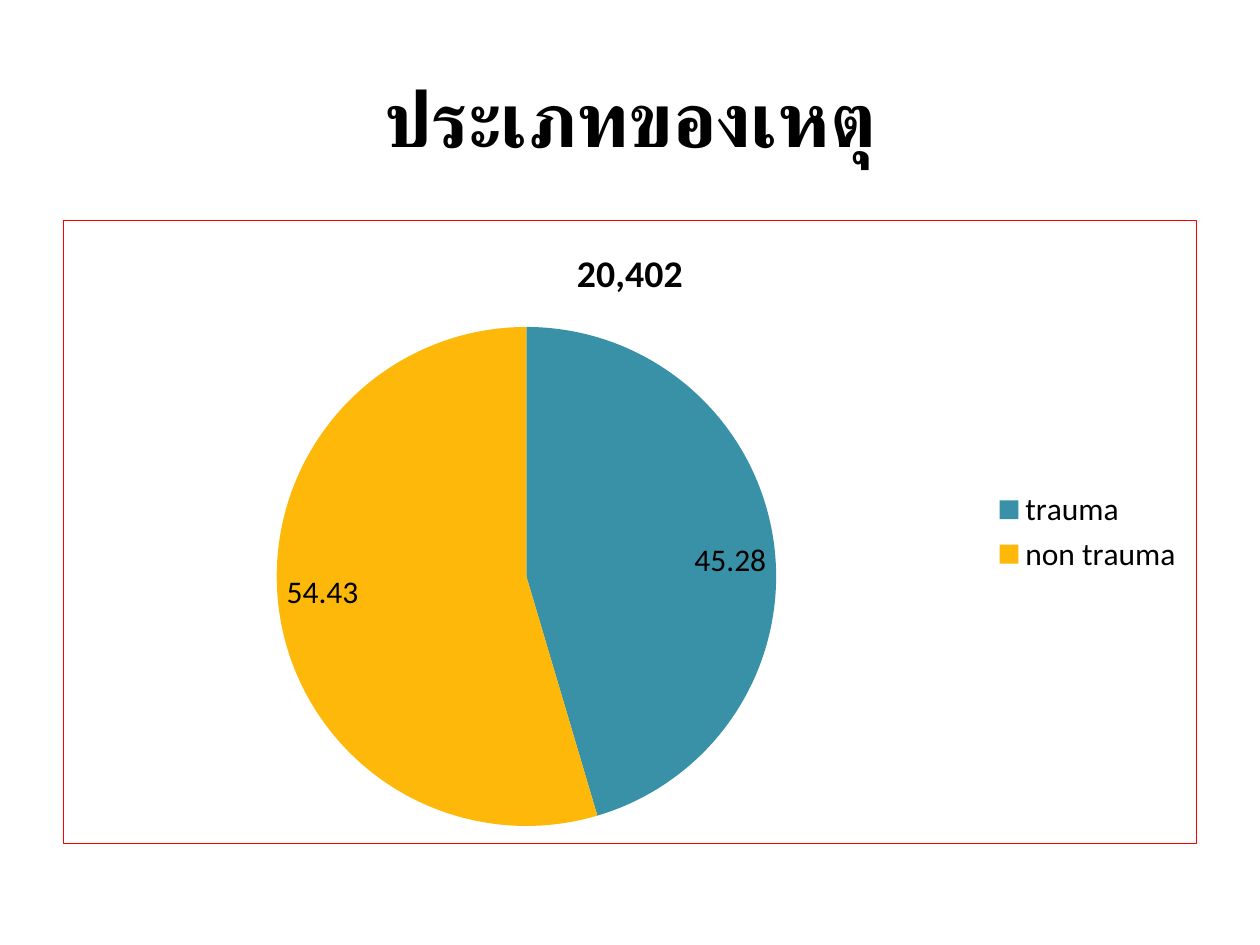
from lxml.etree import fromstring
from pptx import Presentation
from pptx.chart.data import CategoryChartData as Data
from pptx.dml.color import RGBColor as RGB
from pptx.enum.chart import XL_CHART_TYPE as Kind, XL_LABEL_POSITION as Spot, XL_LEGEND_POSITION as Side
from pptx.enum.text import MSO_ANCHOR as Anchor, PP_ALIGN as Align
from pptx.oxml.ns import qn
from pptx.util import Pt

TITLE = "ประเภทของเหตุ"
TOTAL = "20,402"
BLACK = RGB(0, 0, 0)
RED = RGB(255, 0, 0)
TEAL = RGB(0x38, 0x91, 0xA7)
GOLD = RGB(0xFE, 0xB8, 0x0A)
PARTS = [("trauma", 45.28, TEAL), ("non trauma", 54.43, GOLD)]
FONT = "Calibri"
PX = 914400 // 126
WIDE, HIGH = 1260, 945
EDGE = 63
TITLE_TOP, TITLE_HIGH = 38, 158
CHART_TOP, CHART_HIGH = 220, 624


def place(top, high):
    return [n * PX for n in (EDGE, top, WIDE - 2 * EDGE, high)]


def style(font, size, bold=False):
    font.name, font.size, font.bold = FONT, Pt(size), bold
    font.color.rgb = BLACK


def write(frame, text, size):
    line = frame.paragraphs[0]
    line.alignment = Align.CENTER
    run = line.add_run()
    run.text = text
    style(run.font, size, True)


def frame_chart(chart, color, width):
    ns = "http://schemas.openxmlformats.org/drawingml/2006/"
    border = fromstring(
        f'<c:spPr xmlns:c="{ns}chart" xmlns:a="{ns}main"><a:noFill/>'
        f'<a:ln w="{Pt(width)}"><a:solidFill><a:srgbClr val="{color}"/>'
        '</a:solidFill></a:ln></c:spPr>')
    chart.element.find(qn("c:chart")).addnext(border)


def add_pie(slide):
    data = Data(number_format="General")
    data.categories = [name for name, _, _ in PARTS]
    data.add_series(TOTAL, [value for _, value, _ in PARTS])
    box = place(CHART_TOP, CHART_HIGH)
    chart = slide.shapes.add_chart(Kind.PIE, *box, data).chart
    style(chart.font, 18)
    write(chart.chart_title.text_frame, TOTAL, 21.6)
    chart.chart_title.include_in_layout = False
    chart.has_legend = True
    chart.legend.position = Side.RIGHT
    chart.legend.include_in_layout = False
    plot = chart.plots[0]
    plot.vary_by_categories = True
    plot.has_data_labels = True
    labels = plot.data_labels
    labels.show_value, labels.show_percentage = True, False
    labels.position = Spot.INSIDE_END
    style(labels.font, 18)
    for i, (_, _, color) in enumerate(PARTS):
        fill = plot.series[0].points[i].format.fill
        fill.solid()
        fill.fore_color.rgb = color
    frame_chart(chart, RED, 0.75)


def main():
    deck = Presentation()
    deck.slide_width, deck.slide_height = WIDE * PX, HIGH * PX
    slide = deck.slides.add_slide(deck.slide_layouts[5])
    title = slide.shapes.title
    title.left, title.top, title.width, title.height = place(TITLE_TOP, TITLE_HIGH)
    title.text_frame.vertical_anchor = Anchor.MIDDLE
    write(title.text_frame, TITLE, 44)
    add_pie(slide)
    deck.save("out.pptx")


if __name__ == "__main__":
    main()
